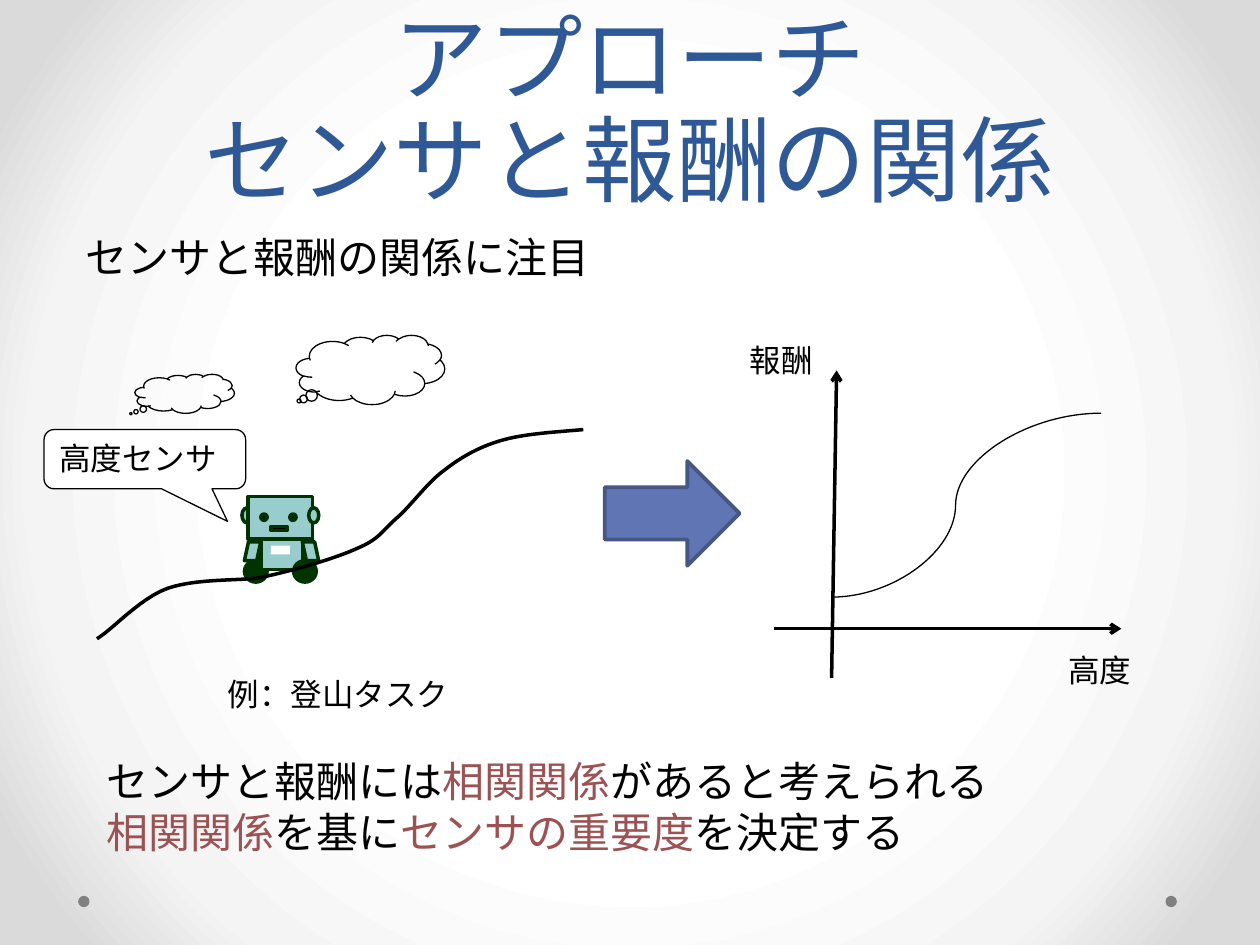
from dataclasses import dataclass

from lxml.etree import SubElement
from pptx import Presentation
from pptx.dml.color import RGBColor
from pptx.enum.shapes import MSO_CONNECTOR as CONN, MSO_SHAPE as SHAPE
from pptx.enum.text import MSO_ANCHOR, MSO_AUTO_SIZE, PP_ALIGN
from pptx.oxml.ns import qn
from pptx.util import Inches, Pt


@dataclass(frozen=True)
class Theme:
    """Colours, fonts and sizes of the slide."""
    black: str = "000000"
    white: str = "FFFFFF"
    title: str = "2F5897"
    accent: str = "9C5252"
    arrow: str = "6076B4"
    arrow_edge: str = "475785"
    dot: str = "808080"
    skin: str = "99CCCC"
    robot_edge: str = "003300"
    backdrop: tuple = ((50, "FFFFFF"), (76, "F4F4F4"), (92, "DADADA"))
    font: str = "Vollkorn"
    callout_font: str = "Arial"
    title_pt: int = 54
    body_pt: int = 24
    label_pt: int = 18
    thin: float = 0.75
    thick: float = 2


T = Theme()
COLS, ROWS = 100, 75
EA, BLACK, RED = SHAPE.OVAL, T.black, T.accent


def grid(*cells):
    """Turn grid columns or rows into lengths; one cell is a tenth of an inch."""
    return [Inches(c / 10) for c in cells]


def rgb(color):
    """Read a hex colour."""
    return RGBColor.from_string(color)


def write(tf, lines, size=T.label_pt, font=T.font, align=PP_ALIGN.LEFT, spacing=None):
    """Fill a text frame with lines, each a list of (text, colour) runs."""
    for i, line in enumerate(lines):
        p = tf.paragraphs[0] if i == 0 else tf.add_paragraph()
        p.alignment = align
        if spacing:
            p.line_spacing = Pt(spacing)
        for j, (text, color) in enumerate(line):
            r = p.add_run()
            r.text = text
            r.font.size, r.font.name = Pt(size), font
            r.font.color.rgb = rgb(color)


def add_label(parent, box, *lines, **fmt):
    """Add a text box that keeps its lines unwrapped."""
    tf = parent.add_textbox(*grid(*box)).text_frame
    tf.word_wrap = False
    tf.auto_size = MSO_AUTO_SIZE.SHAPE_TO_FIT_TEXT
    write(tf, lines, **fmt)


def style(sp, fill=None, line=None, width=T.thick):
    """Set fill and outline, and drop the shadow."""
    sp.shadow.inherit = False
    if fill:
        sp.fill.solid()
        sp.fill.fore_color.rgb = rgb(fill)
    else:
        sp.fill.background()
    if line:
        sp.line.color.rgb, sp.line.width = rgb(line), Pt(width)
    else:
        sp.line.fill.background()


def add_block(parent, kind, box, adj=(), flip=False, **look):
    """Add a styled preset shape."""
    sp = parent.add_shape(kind, *grid(*box))
    for i, value in enumerate(adj):
        sp.adjustments[i] = value
    if flip:
        sp.element.spPr.find(qn("a:xfrm")).set("flipH", "1")
    style(sp, **look)
    return sp


def add_line(parent, start, end, kind=CONN.STRAIGHT, width=T.thick, arrow=False, bend=None):
    """Add a connector, optionally with an arrowhead or a bend position."""
    cn = parent.add_connector(kind, *grid(*start, *end))
    cn.line.color.rgb, cn.line.width = rgb(BLACK), Pt(width)
    pr = cn.element.spPr
    if arrow:
        SubElement(pr.find(qn("a:ln")), qn("a:tailEnd"), type="arrow")
    if bend:
        av = pr.find(qn("a:prstGeom")).get_or_add_avLst()
        SubElement(av, qn("a:gd"), name="adj1", fmla=f"val {round(bend * 100000)}")
    SubElement(pr, qn("a:effectLst"))


def bezier(a, b, c, d, steps=12):
    """Yield points along a cubic curve, leaving out its start."""
    for t in (i / steps for i in range(1, steps + 1)):
        yield tuple((1 - t) ** 3 * p + 3 * t * (1 - t) ** 2 * q + 3 * t * t * (1 - t) * r + t ** 3 * e
                    for p, q, r, e in zip(a, b, c, d))


def add_slope(shapes):
    """Draw the mountain slope from the summit down."""
    knots = [(46.3, 34.1), (44.1, 34.3), (41.9, 34.4), (40, 34.9), (38.2, 35.4), (36.7, 36.2),
             (35.3, 37.3), (33.9, 38.3), (32.6, 40.2), (31.4, 41.2), (30.2, 42.3), (30.1, 42.8),
             (28.2, 43.6), (26.4, 44.4), (22.9, 45.4), (20.4, 45.9), (17.9, 46.1), (15.4, 46),
             (13.3, 46.7), (11.1, 47.5), (8.9, 50), (7.7, 50.7)]
    points = [pt for i in range(0, len(knots) - 1, 3) for pt in bezier(*knots[i:i + 4])]
    fb = shapes.build_freeform(*grid(*knots[0]))
    fb.add_line_segments([grid(*pt) for pt in points], close=False)
    style(fb.convert_to_shape(), line=BLACK)


def add_robot(shapes):
    """Build the climbing robot as one group."""
    g = shapes.add_group_shape().shapes
    ear, wheel, eye, arm = (0.8, 1.2), (1.8, 1.7), (0.5, 0.5), (1.3, 1.5)
    parts = [(EA, (19.2, 40.3, *ear), T.skin), (SHAPE.RECTANGLE, (19.7, 39.4, 5.1, 3.4), T.skin),
             (EA, (19.4, 44.5, *wheel), T.robot_edge), (SHAPE.RECTANGLE, (20.7, 42.8, 3.3, 2.4), T.skin),
             (EA, (23.3, 44.5, *wheel), T.robot_edge), (EA, (20.7, 40.8, *eye), BLACK),
             (EA, (23, 40.8, *eye), BLACK), (SHAPE.RECTANGLE, (21.5, 41.8, 1.3, 0.3), BLACK),
             (SHAPE.PARALLELOGRAM, (19.4, 43, *arm), T.skin),
             (SHAPE.PARALLELOGRAM, (24, 43, *arm), T.skin), (EA, (24.5, 40.3, *ear), T.skin)]
    for kind, box, fill in parts:
        add_block(g, kind, box, flip=box[0] == 24, fill=fill, line=T.robot_edge)
    add_block(g, SHAPE.RECTANGLE, (21.5, 43.3, 1.5, 0.7), fill=T.white)


def add_graph(shapes):
    """Sketch reward against altitude as one group."""
    g = shapes.add_group_shape().shapes
    add_line(g, (66, 53.8), (66.4, 29.4), arrow=True)
    add_line(g, (61.4, 49.9), (89, 49.9), arrow=True)
    add_label(g, (58.5, 26.6, 7.1, 4), [("報酬", BLACK)])
    add_label(g, (83.8, 51.2, 7.1, 4), [("高度", BLACK)])
    add_line(g, (66, 47.4), (87.4, 32.8), kind=CONN.CURVE, width=T.thin, bend=0.46)


def set_backdrop(s):
    """Give the slide a round gradient that darkens towards the corners."""
    s.background.fill.gradient()
    grad = s.element.find(".//" + qn("a:gradFill"))
    for child in list(grad):
        grad.remove(child)
    stops = SubElement(grad, qn("a:gsLst"))
    for pos, color in T.backdrop:
        stop = SubElement(stops, qn("a:gs"), pos=str(pos * 1000))
        SubElement(stop, qn("a:srgbClr"), val=color)
    circle = SubElement(grad, qn("a:path"), path="circle")
    SubElement(circle, qn("a:fillToRect"), {side: "50000" for side in "ltrb"})


def set_title(s, text):
    """Place and format the title."""
    sp = s.shapes.title
    sp.left, sp.top, sp.width, sp.height = grid(5, 0, 90, 17.5)
    tf = sp.text_frame
    tf.auto_size, tf.vertical_anchor = MSO_AUTO_SIZE.NONE, MSO_ANCHOR.BOTTOM
    write(tf, [[(line, T.title)] for line in text.split("\n")],
          size=T.title_pt, align=PP_ALIGN.CENTER, spacing=58)
    for p in tf.paragraphs:
        p.space_before = Pt(0)


def main():
    """Build the slide and save it."""
    prs = Presentation()
    prs.slide_width, prs.slide_height = grid(COLS, ROWS)
    s = prs.slides.add_slide(prs.slide_layouts[5])
    shapes = s.shapes
    set_backdrop(s)
    for x in (92.5, 6.2):
        add_block(shapes, EA, (x, 71.1, 0.9, 0.9), fill=T.dot)
    set_title(s, "アプローチ\nセンサと報酬の関係")
    add_label(shapes, (5.8, 17.9, 42.4, 5), [("センサと報酬の関係に注目", BLACK)], size=T.body_pt)
    add_label(shapes, (7.5, 59.5, 72.7, 9.1),
              [("センサと報酬には", BLACK), ("相関関係", RED), ("があると考えられる", BLACK)],
              [("相関関係", RED), ("を基に", BLACK), ("センサの重要度", RED), ("を決定する", BLACK)],
              size=T.body_pt)
    add_block(shapes, SHAPE.RIGHT_ARROW, (48, 36.6, 10.7, 8.3),
              fill=T.arrow, line=T.arrow_edge, width=2.25)
    add_robot(shapes)
    add_label(shapes, (17.1, 53.1, 19.7, 4), [("例：登山タスク", BLACK)])
    add_slope(shapes)
    for box, adj in (((10.7, 29.7, 7.9, 3.1), (-0.54, 0.51)), ((23.5, 26.6, 11.8, 5.5), (-0.48, 0.45))):
        add_block(shapes, SHAPE.CLOUD_CALLOUT, box, adj=adj, line=BLACK, width=T.thin)
    sp = add_block(shapes, SHAPE.ROUNDED_RECTANGULAR_CALLOUT, (3.5, 34.1, 16, 4.7),
                   adj=(0.41, 1.05, 0.17), fill=T.white, line=BLACK, width=T.thin)
    sp.text_frame.vertical_anchor = MSO_ANCHOR.TOP
    write(sp.text_frame, [[("高度センサ", BLACK)]], font=T.callout_font)
    add_graph(shapes)
    prs.save("out.pptx")


if __name__ == "__main__":
    main()
